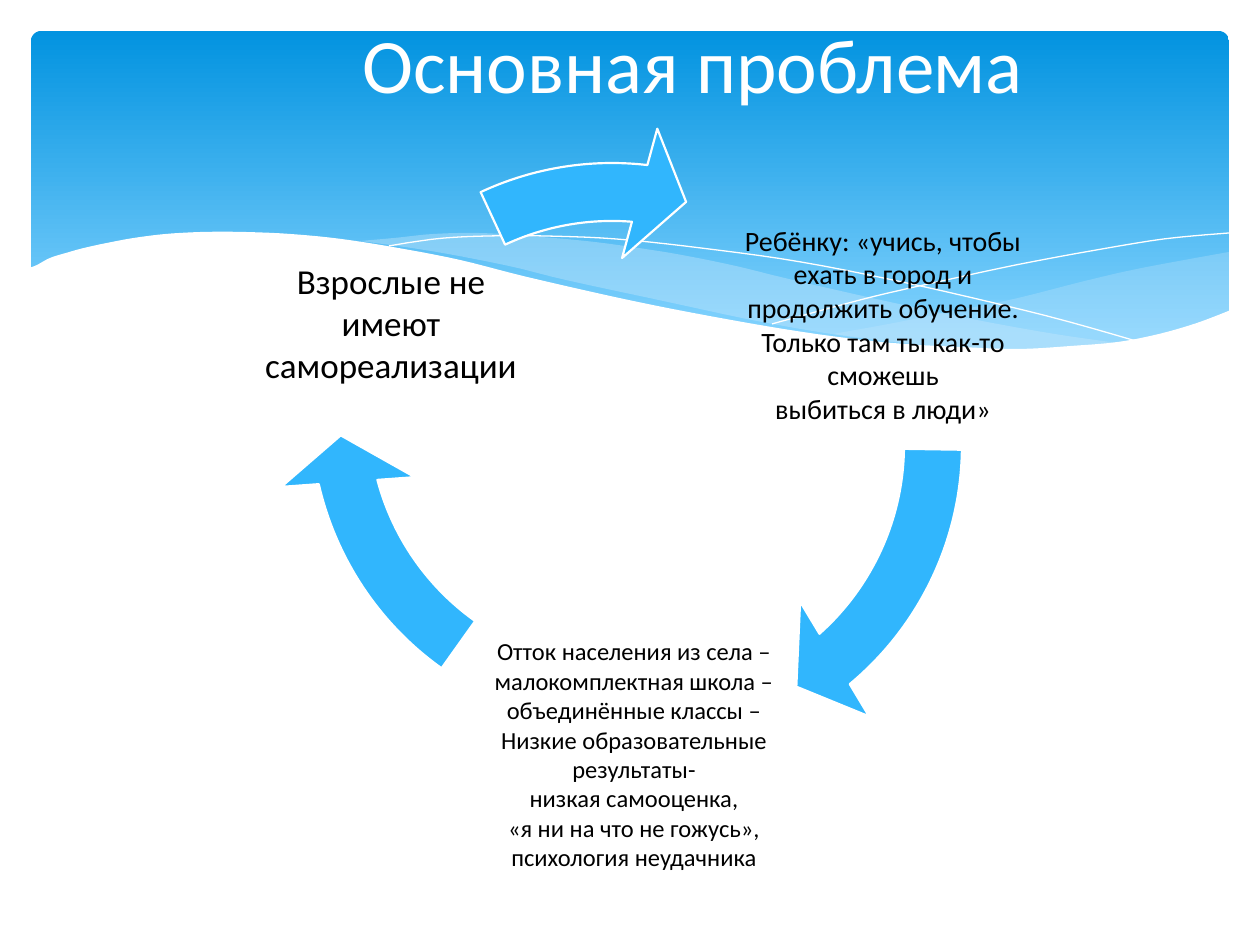
from pptx import Presentation
from pptx import util as u
from pptx.dml.color import RGBColor
from pptx.enum import shapes, text
from pptx.oxml import parse_xml
from pptx.oxml.ns import nsdecls

FONT = "Calibri"
WHITE, BLACK, BLUE = "FFFFFF", "000000", "31B6FD"
PALE = "C6E7FC"
CURVE_STEPS = 5

RIGHT_WAVE = [
    [(1229, 252), (1142, 268), (1085, 281), (1014, 299), (949, 312),
     (889, 324), (833, 334)],
    [(833, 334), (888, 341), (939, 346), (983, 349), (1026, 350), (1076, 348),
     (1120, 344), (1160, 337), (1196, 326), (1229, 311)],
]
MIDDLE_WAVE = [
    [(1125, 344), (1055, 334), (977, 320), (890, 302), (793, 280), (736, 266),
     (682, 255), (632, 247), (586, 241), (529, 236), (479, 233), (433, 234),
     (394, 238), (360, 241)],
    [(360, 241), (431, 251), (509, 266), (566, 280), (668, 302), (757, 321),
     (838, 335), (910, 344), (975, 349), (1031, 350), (1081, 349), (1125, 344)],
]
FALLING_LINE = [(389, 246), (413, 242), (445, 238), (488, 236), (545, 236),
                (616, 239), (701, 248), (801, 262), (916, 285), (1047, 316),
                (1143, 343)]
RISING_LINE = [(772, 324), (823, 310), (876, 296), (942, 281), (1016, 265),
               (1091, 251), (1164, 239), (1229, 233)]
FRONT_WAVE = [
    [(1231, 310), (1197, 323), (1159, 334), (1118, 342), (1071, 346),
     (1019, 349), (960, 347), (892, 343), (816, 334), (731, 320), (633, 301),
     (527, 277), (460, 260), (398, 248), (341, 239), (290, 234), (243, 232),
     (203, 232), (166, 234), (134, 238), (107, 243), (84, 248), (66, 253),
     (50, 258), (37, 265), (29, 268)],
    [(29, 414), (1231, 414)],
]

CHILD = ["Ребёнку: «учись, чтобы", "ехать в город и", "продолжить обучение.",
         "Только там ты как-то сможешь", "выбиться в люди»"]
VILLAGE = ["Отток населения из села –", "малокомплектная школа –",
           "объединённые классы –", "Низкие образовательные результаты-",
           "низкая самооценка,", "«я ни на что не гожусь»,",
           "психология неудачника"]
ADULTS = ["Взрослые не имеют", "самореализации"]


def px(value):
    return u.Emu(round(value * 914400 / 126))


def color(value):
    return RGBColor.from_string(value)


def smooth_curve(knots):
    if len(knots) < 3:
        return knots
    padded = [knots[0], *knots, knots[-1]]
    points = []
    for a, b, c, d in zip(padded, padded[1:], padded[2:], padded[3:]):
        for step in range(CURVE_STEPS):
            t = step / CURVE_STEPS
            points.append(tuple(
                q + t * (r - p) / 2 + t * t * (2 * p - 5 * q + 4 * r - s) / 2
                + t ** 3 * (3 * q - p - 3 * r + s) / 2
                for p, q, r, s in zip(a, b, c, d)))
    return points + [knots[-1]]


def draw_outline(slide, curves, close):
    points = [(px(x), px(y)) for curve in curves for x, y in smooth_curve(curve)]
    builder = slide.shapes.build_freeform(*points[0])
    builder.add_line_segments(points[1:], close=close)
    outline = builder.convert_to_shape()
    outline.shadow.inherit = False
    return outline


def add_wave(slide, curves, fill, opacity=100):
    wave = draw_outline(slide, curves, True)
    wave.fill.solid()
    wave.fill.fore_color.rgb = color(fill)
    wave.line.fill.background()
    if opacity < 100:
        solid = wave.fill._xPr.solidFill
        solid[0].append(parse_xml(
            f'<a:alpha {nsdecls("a")} val="{opacity * 1000}"/>'))


def add_wave_line(slide, knots):
    line = draw_outline(slide, [knots], False)
    line.fill.background()
    line.line.color.rgb = color(WHITE)
    line.line.width = 0


def add_banner(slide):
    banner = slide.shapes.add_shape(
        shapes.MSO_SHAPE.ROUNDED_RECTANGLE, px(31), px(31), px(1198), px(340))
    banner.adjustments[0] = 0.03
    banner.shadow.inherit = False
    banner.line.fill.background()
    banner.fill.gradient()
    banner.fill.gradient_angle = 270
    stops = [(0, "0293E0"), (0.9, "83D3FE")]
    for stop, (position, tint) in zip(banner.fill.gradient_stops, stops):
        stop.position = position
        stop.color.rgb = color(tint)


def format_text(frame, size, tint):
    frame.word_wrap = True
    frame.vertical_anchor = text.MSO_ANCHOR.MIDDLE
    for para in frame.paragraphs:
        para.alignment = text.PP_ALIGN.CENTER
        for span in para.runs:
            span.font.name = FONT
            span.font.size = u.Pt(size)
            span.font.color.rgb = color(tint)


def set_title(slide, words):
    title = slide.shapes.title
    title.left, title.top, title.width, title.height = map(px, (126, 0, 1134, 125))
    title.text_frame.text = words
    format_text(title.text_frame, 44, WHITE)


def add_stage(slide, left, top, lines, size, inset, bottom_inset):
    box = slide.shapes.add_textbox(px(left), px(top), px(296), px(296))
    frame = box.text_frame
    frame.margin_left = frame.margin_right = frame.margin_top = px(inset)
    frame.margin_bottom = px(bottom_inset)
    frame.text = "\n".join(lines)
    format_text(frame, size, BLACK)


def add_cycle_arrow(slide, left, top, start, end):
    arrow = slide.shapes.add_shape(
        shapes.MSO_SHAPE.CIRCULAR_ARROW, px(left), px(top), px(698), px(698))
    units_per_degree = 0.6
    head = 9.61
    values = (0.083, head * units_per_degree, end * units_per_degree,
              start * units_per_degree, 0.096)
    for index, value in enumerate(values):
        arrow.adjustments[index] = value
    arrow.shadow.inherit = False
    arrow.fill.solid()
    arrow.fill.fore_color.rgb = color(BLUE)
    arrow.line.color.rgb = color(WHITE)
    arrow.line.width = u.Pt(1.25)


def main():
    deck = Presentation()
    deck.slide_width, deck.slide_height = px(1260), px(945)
    page = deck.slides.add_slide(deck.slide_layouts[5])

    add_banner(page)
    add_wave(page, RIGHT_WAVE, PALE, 29)
    add_wave(page, MIDDLE_WAVE, PALE, 40)
    add_wave_line(page, FALLING_LINE)
    add_wave_line(page, RISING_LINE)
    add_wave(page, FRONT_WAVE, WHITE)

    title = page.shapes.title
    page.shapes._spTree.append(title._element)
    set_title(page, "Основная проблема")

    add_stage(page, 735, 176, CHILD, 16, 3, 3)
    add_cycle_arrow(page, 302, 96, 0.88, 49.37)
    add_stage(page, 486, 606, VILLAGE, 14, 3, 3)
    add_cycle_arrow(page, 273, 66, 125.46, 166.24)
    add_stage(page, 243, 204, ADULTS, 20, 4, 64)
    add_cycle_arrow(page, 263, 125, 245.01, 275.63)
    deck.save("out.pptx")


if __name__ == "__main__":
    main()
